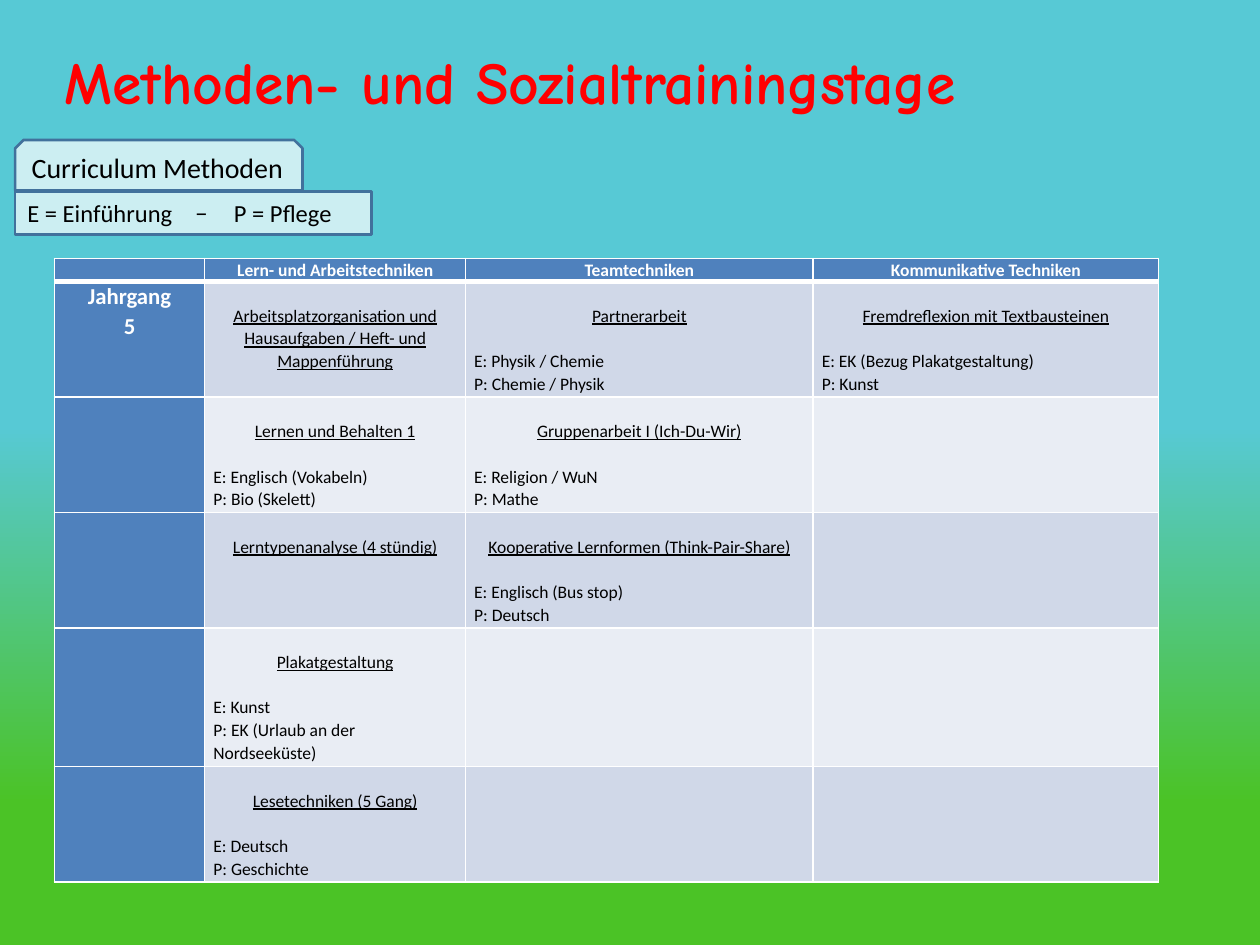
from dataclasses import dataclass
from typing import Any

from lxml.etree import SubElement as Sub
from pptx import Presentation as Deck
from pptx.dml.color import RGBColor as Rgb
from pptx.enum.shapes import MSO_SHAPE as Form
from pptx.enum.text import MSO_ANCHOR as Anchor, PP_ALIGN as Align
from pptx.oxml.ns import qn
from pptx.util import Pt

WHITE, BLACK, RED = "FFFFFF", "000000", "FF0000"
BLUE, EDGE = "4F81BD", "41719C"
BANDS = ("D0D8E8", "E9EDF4")
SKY, GRASS = "57C9D5", "4BC326"
LEAD = 1.07
GAP = 13

TITLE = {"name": "Comic Neue", "size": Pt(34), "bold": True}
HEAD = {"name": "Calibri", "size": Pt(10), "bold": True}
GRADE = {**HEAD, "size": Pt(13)}
BODY = {**HEAD, "bold": False}
TOPIC = {**BODY, "underline": True}


@dataclass
class Label:
    form: Any
    left: float
    top: float
    width: float
    height: float
    text: str
    size: float
    tabs: tuple[float, ...] = ()


@dataclass
class Entry:
    topic: str = ""
    notes: tuple[str, ...] = ()


LABELS = (
    Label(Form.RECTANGLE, 8.64, 109.44, 203.76, 24.5,
          "E = Einführung\t−\tP = Pflege", 14, (96, 118)),
    Label(Form.SNIP_2_SAME_RECTANGLE, 8.64, 80, 164.2, 28.8,
          "Curriculum Methoden", 16),
)
HEADS = ("", "Lern- und Arbeitstechniken", "Teamtechniken", "Kommunikative Techniken")
WIDTHS = (86, 149, 198.7, 197.3)
HEIGHTS = (13.2, 66, 66, 66, 79.2, 66)
ROWS = (
    (Entry("Arbeitsplatzorganisation und Hausaufgaben / Heft- und Mappenführung"),
     Entry("Partnerarbeit", ("E: Physik / Chemie", "P: Chemie / Physik")),
     Entry("Fremdreflexion mit Textbausteinen",
           ("E: EK (Bezug Plakatgestaltung)", "P: Kunst"))),
    (Entry("Lernen und Behalten 1", ("E: Englisch (Vokabeln)", "P: Bio (Skelett)")),
     Entry("Gruppenarbeit I (Ich-Du-Wir)", ("E: Religion / WuN", "P: Mathe")),
     Entry()),
    (Entry("Lerntypenanalyse (4 stündig)"),
     Entry("Kooperative Lernformen (Think-Pair-Share)",
           ("E: Englisch (Bus stop)", "P: Deutsch")),
     Entry()),
    (Entry("Plakatgestaltung", ("E: Kunst", "P: EK (Urlaub an der Nordseeküste)")),
     Entry(), Entry()),
    (Entry("Lesetechniken (5 Gang)", ("E: Deutsch", "P: Geschichte")),
     Entry(), Entry()),
)


def tint(color: Any, code: str) -> None:
    color.rgb = Rgb.from_string(code)


def paint(fill: Any, code: str) -> None:
    fill.solid()
    tint(fill.fore_color, code)


def style(item: Any, looks: dict) -> None:
    for key, value in looks.items():
        setattr(item, key, value)


def write(para: Any, text: str, looks: dict, code: str, align: Any) -> None:
    para.alignment = align
    run = para.add_run()
    run.text = text
    style(run.font, looks)
    tint(run.font.color, code)


def draw_sky(slide: Any) -> None:
    fill = slide.background.fill
    fill.gradient()
    fill.gradient_angle = 270
    for stop, code, place in zip(fill.gradient_stops, (SKY, GRASS), (0.45, 0.85)):
        tint(stop.color, code)
        stop.position = place


def draw_title(slide: Any) -> None:
    box = slide.shapes.add_textbox(Pt(-14.4), Pt(20.9), Pt(612), Pt(51))
    frame = box.text_frame
    style(frame, {"word_wrap": True, "vertical_anchor": Anchor.MIDDLE})
    write(frame.paragraphs[0], "Methoden- und Sozialtrainingstage",
          TITLE, RED, Align.CENTER)


def draw_label(slide: Any, label: Label) -> None:
    area = map(Pt, (label.left, label.top, label.width, label.height))
    shape = slide.shapes.add_shape(label.form, *area)
    shape.shadow.inherit = False
    paint(shape.fill, WHITE)
    solid = shape.fill._xPr.find(qn("a:solidFill"))
    Sub(solid[0], qn("a:alpha"), val="70000")
    tint(shape.line.color, EDGE)
    shape.line.width = Pt(1.5)
    frame = shape.text_frame
    style(frame, {"word_wrap": True, "vertical_anchor": Anchor.TOP})
    para = frame.paragraphs[0]
    if label.tabs:
        stops = Sub(para._p.get_or_add_pPr(), qn("a:tabLst"))
        for spot in label.tabs:
            Sub(stops, qn("a:tab"), pos=str(Pt(spot)), algn="l")
    write(para, label.text, {"name": "Calibri", "size": Pt(label.size)},
          BLACK, Align.LEFT)


def edge(cell: Any, side: str, width: float) -> None:
    line = Sub(cell._tc.get_or_add_tcPr(), qn(f"a:ln{side}"), w=str(Pt(width)))
    Sub(Sub(line, qn("a:solidFill")), qn("a:srgbClr"), val=WHITE)


def dress(cell: Any, code: str, top: float = 1, base: float = 1) -> None:
    for side, width in {"L": 1, "R": 1, "T": top, "B": base}.items():
        edge(cell, side, width)
    paint(cell.fill, code)
    style(cell, {"margin_left": Pt(5), "margin_right": Pt(5),
                 "margin_top": 0, "margin_bottom": 0})


def fill_cell(cell: Any, lines: list[tuple], code: str) -> None:
    frame = cell.text_frame
    if not lines:
        Sub(frame.paragraphs[0]._p, qn("a:endParaRPr"), sz="1000")
    for spot, (text, looks, align) in enumerate(lines):
        para = frame.add_paragraph() if spot else frame.paragraphs[0]
        para.line_spacing = LEAD
        write(para, text, looks, code, align)


def fill_entry(cell: Any, entry: Entry) -> None:
    lines = [(entry.topic, TOPIC, Align.CENTER)] if entry.topic else []
    lines += [(note, BODY, Align.LEFT) for note in entry.notes]
    fill_cell(cell, lines, BLACK)
    if entry.topic:
        cell.margin_top = Pt(GAP)
    if entry.notes:
        cell.text_frame.paragraphs[0].space_after = Pt(GAP)


def draw_table(slide: Any) -> None:
    table = slide.shapes.add_table(
        len(HEIGHTS), len(WIDTHS), Pt(31), Pt(147.6),
        Pt(sum(WIDTHS)), Pt(sum(HEIGHTS))).table
    style(table, {"first_row": False, "horz_banding": False})
    for col, width in zip(table.columns, WIDTHS):
        col.width = Pt(width)
    for row, height in zip(table.rows, HEIGHTS):
        row.height = Pt(height)
    for x, head in enumerate(HEADS):
        cell = table.cell(0, x)
        dress(cell, BLUE, base=3)
        fill_cell(cell, [(head, HEAD, Align.CENTER)] if head else [], WHITE)
    for y, row in enumerate(ROWS, 1):
        top = 3 if y == 1 else 1
        grade = ("Jahrgang", "5") if y == 1 else ()
        dress(table.cell(y, 0), BLUE, top)
        fill_cell(table.cell(y, 0),
                  [(text, GRADE, Align.CENTER) for text in grade], WHITE)
        for x, entry in enumerate(row, 1):
            dress(table.cell(y, x), BANDS[(y - 1) % 2], top)
            fill_entry(table.cell(y, x), entry)


def main() -> None:
    deck = Deck()
    style(deck, {"slide_width": Pt(720), "slide_height": Pt(540)})
    slide = deck.slides.add_slide(deck.slide_layouts[6])
    draw_sky(slide)
    draw_title(slide)
    for label in LABELS:
        draw_label(slide, label)
    draw_table(slide)
    deck.save("out.pptx")


if __name__ == "__main__":
    main()
